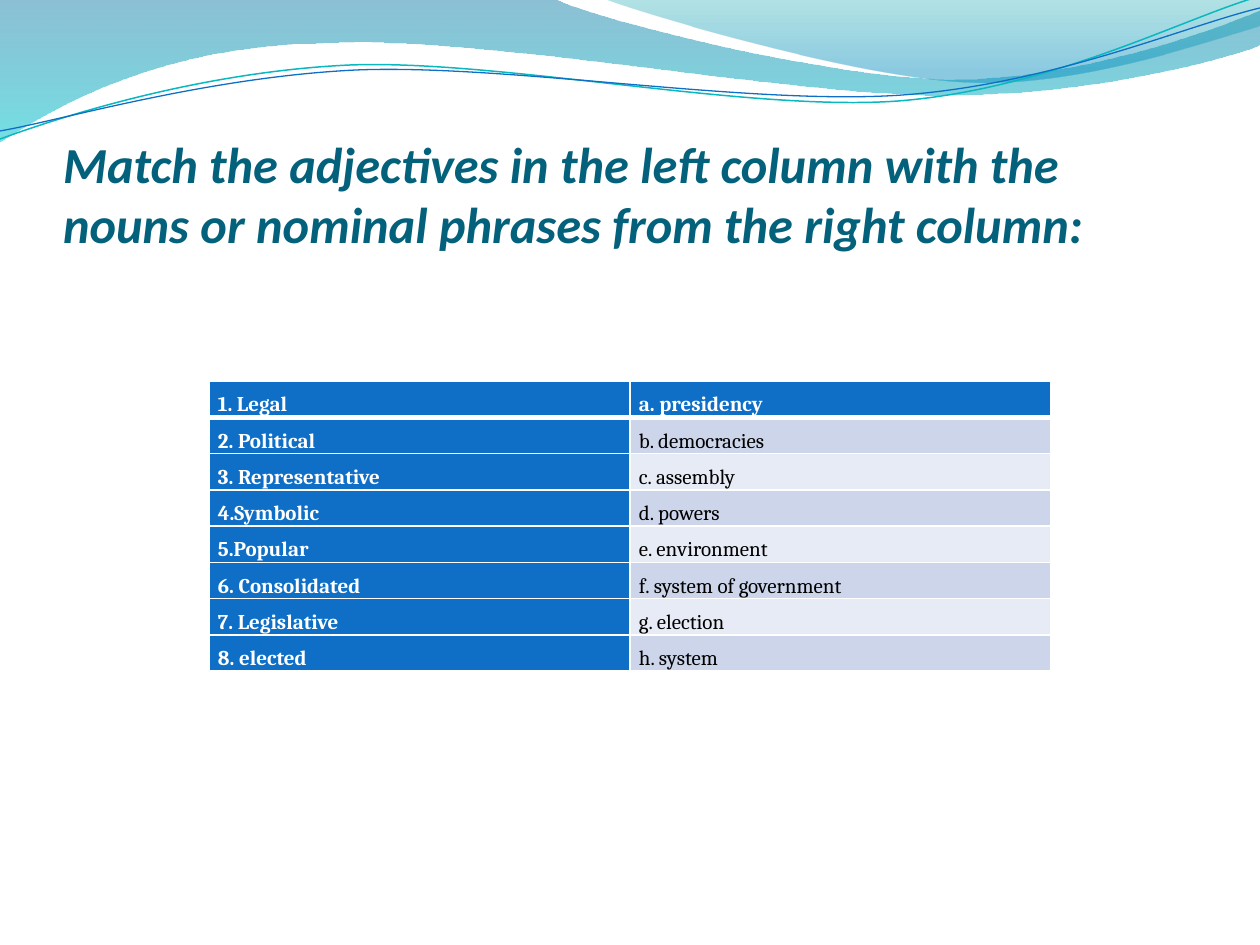
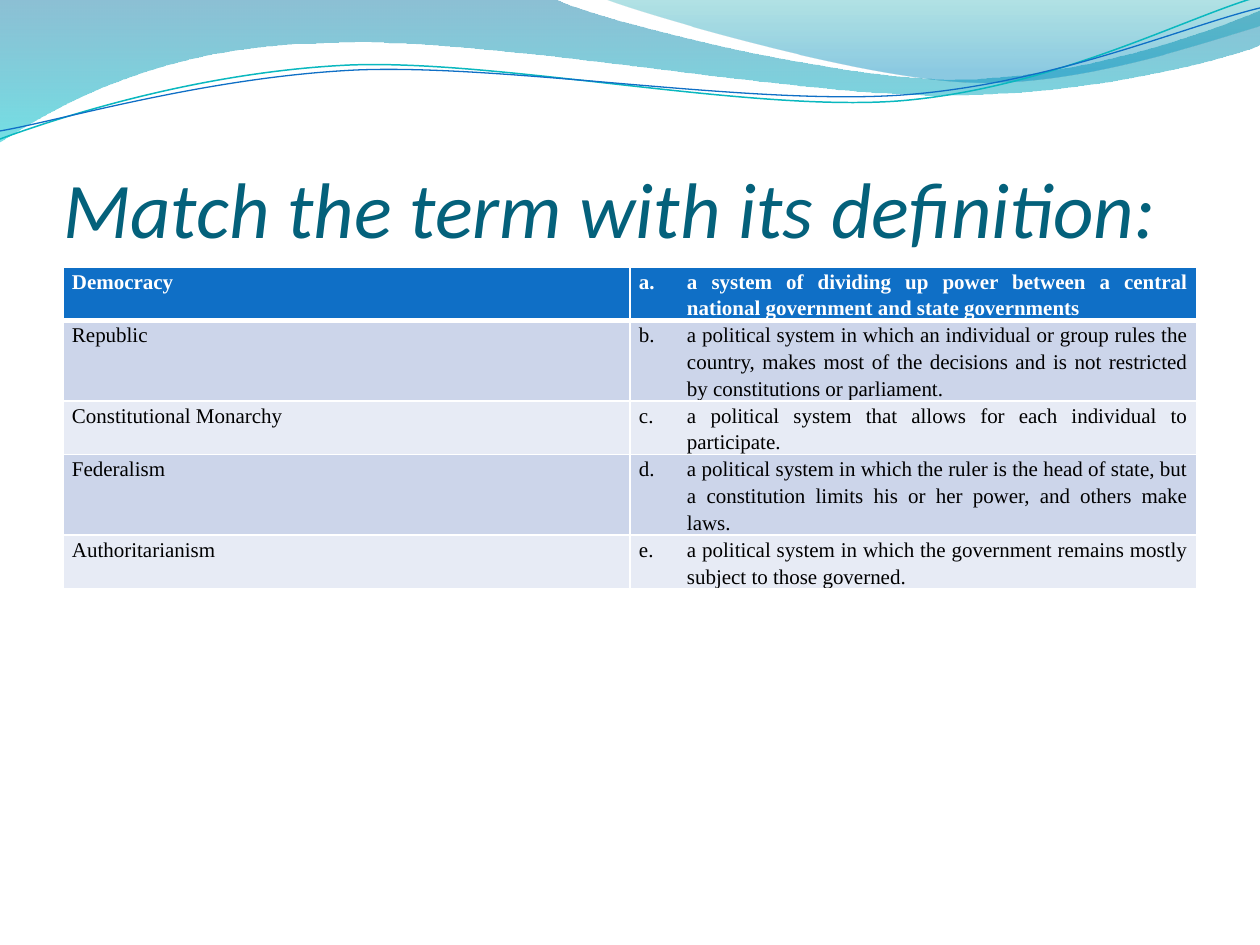
from lxml import etree
from pptx import Presentation
from pptx import util as u
from pptx.dml.color import RGBColor
from pptx.enum import text
from pptx.oxml.ns import qn

PX = 914400 / 126
COLORS = {
    "title": "04617B", "header": "0F6FC6", "white": "FFFFFF", "black": "000000",
    "band_dark": "CCD5EA", "band_light": "E7EBF5",
    "teal_line": "0AB8BF", "blue_line": "0F6FC6",
    "deep_blue": "0074A1", "aqua": "00C6CF", "teal": "00A1A9", "sky": "008BBF",
}
INDENT = 48

# Outlines are lists of steps: two numbers make a line, six a Bézier curve.
BROAD_WAVE = [(0, 0), (554, -1), (600, 21, 837, 79, 955, 79),
              (1075, 79, 1207, 33, 1260, 11), (1261, 45),
              (1239, 55, 1096, 96, 940, 95), (783, 95, 481, 35, 324, 43),
              (163, 45, 58, 105, -1, 142)]
RIGHT_WAVE = [(604, -1), (641, 14, 859, 78, 969, 82),
              (1079, 87, 1211, 40, 1260, 26), (1260, 0)]
TEAL_CURVE = [(0, 139), (60, 117, 199, 72, 349, 65),
              (498, 59, 747, 112, 898, 101), (1050, 89, 1182, 19, 1257, -3)]
BLUE_CURVE = [(0, 131), (59, 121, 207, 77, 357, 70),
              (508, 64, 752, 106, 903, 95), (1053, 84, 1185, 26, 1260, 8)]

ADJECTIVES_AND_NOUNS = [
    ("1. Legal", "a. presidency"),
    ("2. Political", "b. democracies"),
    ("3. Representative", "c. assembly"),
    ("4.Symbolic", "d. powers"),
    ("5.Popular", "e. environment"),
    ("6. Consolidated", "f. system of government"),
    ("7. Legislative", "g. election"),
    ("8. elected", "h. system"),
]
TERMS_AND_DEFINITIONS = [
    ("Democracy", "a system of dividing up power between a central national "
     "government and state governments"),
    ("Republic", "a political system in which an individual or group rules the country, "
     "makes most of the decisions and is not restricted by constitutions or parliament."),
    ("Constitutional Monarchy",
     "a political system that allows for each individual to participate."),
    ("Federalism", "a political system in which the ruler is the head of state, but a "
     "constitution limits his or her power, and others make laws."),
    ("Authoritarianism", "a political system in which the government remains mostly "
     "subject to those governed."),
]


def px(n):
    return u.Emu(round(n * PX))


def rgb(name):
    return RGBColor.from_string(COLORS[name])


def add_outline(slide, outline, close):
    """Build a freeform through all points, then bend its six-number steps into curves."""
    points = [(px(x), px(y)) for step in outline
              for x, y in zip(step[::2], step[1::2])]
    builder = slide.shapes.build_freeform(*points[0])
    builder.add_line_segments(points[1:], close=close)
    sp = builder.convert_to_shape()
    sp.shadow.inherit = False
    lines = iter(list(sp.element.iter(qn("a:lnTo"))))
    for step in outline[1:]:
        line = next(lines)
        if len(step) == 6:
            curve = etree.Element(qn("a:cubicBezTo"))
            line.addprevious(curve)
            for part in (line, next(lines), next(lines)):
                curve.append(part[0])
                part.getparent().remove(part)
    return sp


def add_wave(slide, outline, stops):
    """Add a closed shape with a downward gradient of (position, color, opacity %) stops."""
    sp = add_outline(slide, outline, True)
    sp.line.fill.background()
    sp.fill.gradient()
    sp.fill.gradient_angle = 270
    for stop, (position, color, _) in zip(sp.fill.gradient_stops, stops):
        stop.position = position
        stop.color.rgb = rgb(color)
    gradient = sp.element.spPr.find(qn("a:gradFill"))
    for clr, (_, _, opacity) in zip(gradient.iter(qn("a:srgbClr")), stops):
        etree.SubElement(clr, qn("a:alpha"), val=str(opacity * 1000))
    return sp


def add_curve(slide, outline, color, width):
    sp = add_outline(slide, outline, False)
    sp.fill.background()
    sp.line.color.rgb = rgb(color)
    sp.line.width = u.Pt(width)
    return sp


def add_waves_to_master(slide):
    """Build the waves on a slide, then move them behind its master's placeholders."""
    waves = [
        add_wave(slide, BROAD_WAVE, [(0, "deep_blue", 45), (1, "aqua", 55)]),
        add_wave(slide, RIGHT_WAVE, [(0, "teal", 30), (0.8, "sky", 45)]),
        add_curve(slide, TEAL_CURVE, "teal_line", 0.85),
        add_curve(slide, BLUE_CURVE, "blue_line", 0.75),
    ]
    tree = slide.slide_layout.slide_master.shapes.element
    for i, sp in enumerate(waves):
        tree.insert(2 + i, sp.element)


def set_title(slide, wording, size, bold=False):
    sp = slide.shapes.title
    sp.left, sp.top, sp.width, sp.height = px(63), px(96), px(1134), px(158)
    tf = sp.text_frame
    tf.text = wording
    tf.word_wrap = True
    tf.auto_size = text.MSO_AUTO_SIZE.NONE
    tf.vertical_anchor = text.MSO_ANCHOR.BOTTOM
    tf.margin_left = tf.margin_right = tf.margin_bottom = 0
    tf.margin_top = px(6)
    p = tf.paragraphs[0]
    p.alignment = text.PP_ALIGN.LEFT
    p.font.name, p.font.size = "Calibri", u.Pt(size)
    p.font.bold, p.font.italic = bold, True
    p.font.color.rgb = rgb("title")


def set_borders(cell, row):
    """Draw white borders, with a thick one below the header row."""
    widths = {"L": 1, "R": 1, "T": 3 if row == 1 else 1, "B": 3 if row == 0 else 1}
    tcPr = cell._tc.get_or_add_tcPr()
    for i, (side, width) in enumerate(widths.items()):
        ln = etree.Element(qn(f"a:ln{side}"), w=str(u.Pt(width)))
        fill = etree.SubElement(ln, qn("a:solidFill"))
        etree.SubElement(fill, qn("a:srgbClr"), val=COLORS["white"])
        tcPr.insert(i, ln)


def number_paragraph(p, number):
    """Letter a paragraph a., b., c. ... by its number."""
    pPr = p._p.get_or_add_pPr()
    bullet = etree.Element(qn("a:buAutoNum"), type="alphaLcPeriod", startAt=str(number))
    pPr.insert_element_before(bullet, "a:tabLst", "a:defRPr", "a:extLst")


def fill_cell(cell, wording, row, header, font, spacing):
    cell.fill.solid()
    band = "band_dark" if row % 2 else "band_light"
    cell.fill.fore_color.rgb = rgb("header" if header else band)
    set_borders(cell, row)
    cell.margin_left = cell.margin_right = px(9)
    cell.margin_top = cell.margin_bottom = 0
    p = cell.text_frame.paragraphs[0]
    p.text = wording
    p.alignment = text.PP_ALIGN.JUSTIFY
    p.line_spacing = spacing
    pPr = p._p.get_or_add_pPr()
    pPr.set("marL", str(px(INDENT)))
    pPr.set("indent", str(px(-INDENT)))
    p.font.name, p.font.size, p.font.bold = font, u.Pt(12), header
    p.font.color.rgb = rgb("white" if header else "black")
    return p


def add_matching_table(slide, rows, box, font, spacing, first_col=False, lettered=False):
    left, top, width, row_height = box
    frame = slide.shapes.add_table(len(rows), 2, px(left), px(top), px(width),
                                   px(row_height * len(rows)))
    table = frame.table
    table.first_col = first_col
    for row, wordings in enumerate(rows):
        for col, wording in enumerate(wordings):
            header = row == 0 or (first_col and col == 0)
            p = fill_cell(table.cell(row, col), wording, row, header, font, spacing)
            if lettered and col == 1:
                number_paragraph(p, row + 1)


def main():
    prs = Presentation()
    prs.slide_width, prs.slide_height = px(1260), px(945)
    layout = prs.slide_layouts[5]

    adjectives = prs.slides.add_slide(layout)
    add_waves_to_master(adjectives)
    set_title(adjectives, "Match the adjectives in the left column with the nouns or "
              "nominal phrases from the right column:", 28.8, bold=True)
    add_matching_table(adjectives, ADJECTIVES_AND_NOUNS, (209, 381, 842, 34),
                       "Cambria", 1.5, first_col=True)

    definitions = prs.slides.add_slide(layout)
    set_title(definitions, "Match the term with its definition:", 45)
    add_matching_table(definitions, TERMS_AND_DEFINITIONS, (63, 267, 1134, 52),
                       "Times New Roman", 1.15, lettered=True)

    prs.save("out.pptx")


if __name__ == "__main__":
    main()
